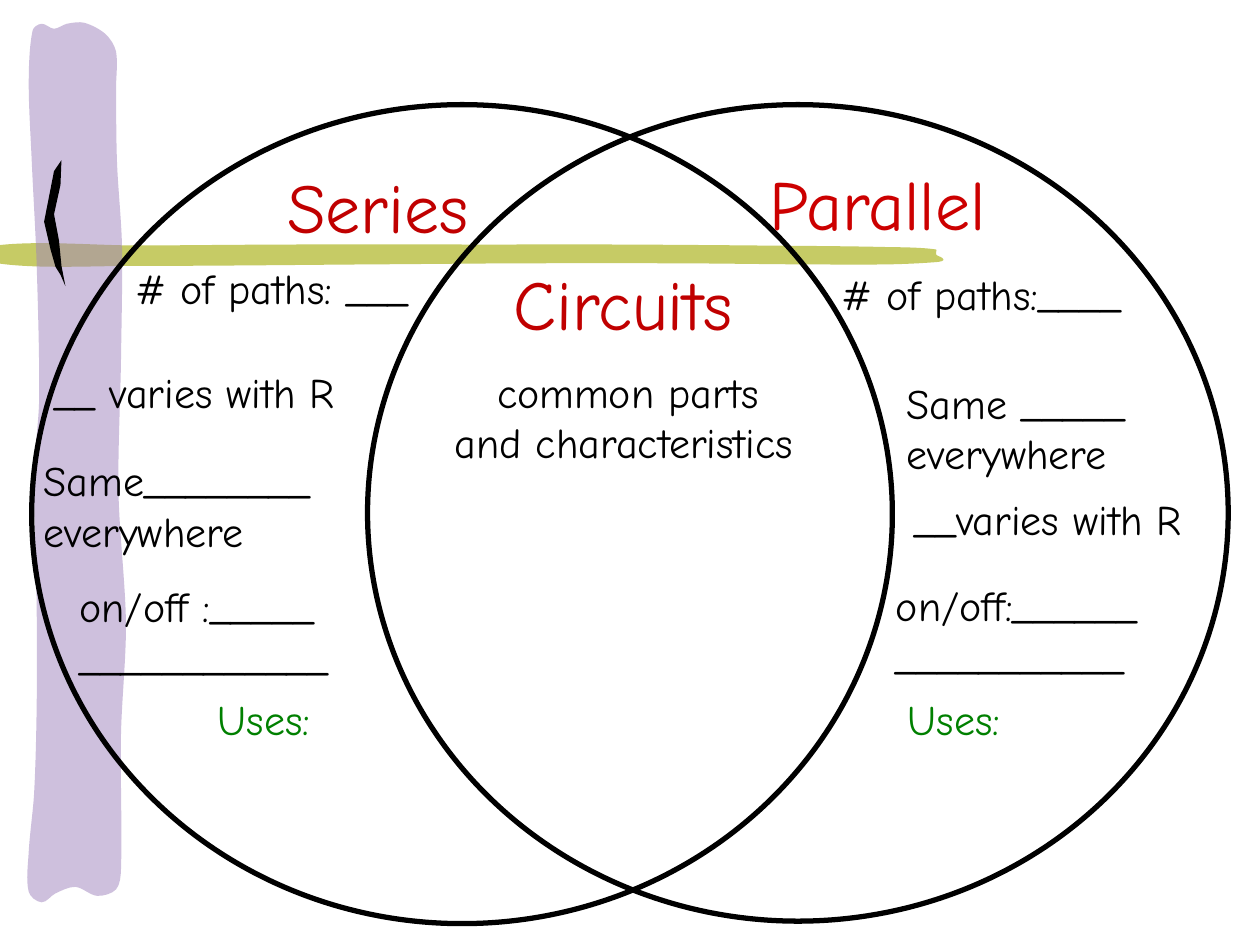
from math import dist, hypot

from lxml import etree
from pptx import Presentation
from pptx.dml.color import RGBColor
from pptx.enum.shapes import MSO_SHAPE
from pptx.enum.text import MSO_AUTO_SIZE
from pptx.oxml.ns import qn
from pptx.util import Cm, Pt

BLACK = RGBColor(0x00, 0x00, 0x00)
RED = RGBColor(0xC0, 0x00, 0x00)
BRIGHT_RED = RGBColor(0xCC, 0x00, 0x00)
GREEN = RGBColor(0x00, 0x80, 0x00)
OLIVE = RGBColor(0xC6, 0xCB, 0x65)
PURPLE = RGBColor(0x9F, 0x83, 0xBD)
FONT = "Comic Neue"

# Outlines in cm
BAND = [
    (15.27, 4.95), (17.83, 4.98), (18.87, 5.03), (18.87, 5.13), (19.02, 5.23),
    (18.92, 5.28), (17.93, 5.33), (16.13, 5.33), (13.74, 5.31), (10.52, 5.31),
    (7.57, 5.33), (2.82, 5.36), (-0.05, 5.31), (-0.08, 4.95), (2.82, 4.95),
    (5.89, 4.93), (9.93, 4.93), (12.42, 4.93),
]
BRUSH = [
    (0.74, 14.25), (0.74, 12.22), (0.69, 9.53), (0.79, 8.05), (0.74, 5.33),
    (0.64, 3.23), (0.58, 1.65), (0.66, 0.61), (0.84, 0.48), (1.09, 0.58),
    (1.35, 0.48), (1.7, 0.46), (2.13, 0.69), (2.34, 1.04), (2.34, 1.8),
    (2.36, 3.28), (2.46, 4.95), (2.44, 7.26), (2.39, 9.93), (2.54, 12.57),
    (2.44, 14.81), (2.44, 17.53), (2.34, 17.93), (1.96, 18.06), (1.52, 17.88),
    (1.12, 18.01), (0.84, 18.19), (0.58, 17.98), (0.58, 17.17), (0.69, 15.98),
]
BRACKET = [
    (1.24, 3.23), (1.22, 3.73), (1.09, 4.32), (1.19, 4.85), (1.24, 5.36), (1.32, 5.77),
    (1.22, 5.54), (1.12, 5.38), (1.02, 5.03), (0.89, 4.47), (0.99, 3.96), (1.09, 3.45),
]


def handle(before, point, after, length):
    """Control point at a distance from point, parallel to its neighbours."""
    dx, dy = after[0] - before[0], after[1] - before[1]
    k = length / hypot(dx, dy)
    return point[0] + k * dx, point[1] + k * dy


def curve_segments(sp, points):
    """Turn the straight segments of a closed freeform into Bezier curves."""
    n = len(points)
    for i, segment in enumerate(list(sp._element.iter(qn("a:lnTo")))):
        before, start, end, after = (points[(i + k) % n] for k in (-1, 0, 1, 2))
        reach = 0.3 * dist(start, end)
        curve = etree.Element(qn("a:cubicBezTo"))
        for x, y in (handle(before, start, end, reach), handle(start, end, after, -reach), end):
            pt = etree.SubElement(curve, qn("a:pt"))
            pt.set("x", str(round(x - sp.left)))
            pt.set("y", str(round(y - sp.top)))
        segment.getparent().replace(segment, curve)


prs = Presentation()
prs.slide_width, prs.slide_height = Cm(25.4), Cm(19.05)
s = prs.slides.add_slide(prs.slide_layouts[6])

# Brush strokes behind the diagram
for outline, color, alpha, curved in [
    (BAND, OLIVE, 100, True),
    (BRUSH, PURPLE, 50, True),
    (BRACKET, BLACK, 100, False),
]:
    points = [(Cm(x), Cm(y)) for x, y in outline]
    builder = s.shapes.build_freeform(*points[0])
    builder.add_line_segments(points[1:] + points[:1], close=True)
    sp = builder.convert_to_shape()
    if curved:
        curve_segments(sp, points)
    sp.shadow.inherit = False
    sp.fill.solid()
    sp.fill.fore_color.rgb = color
    sp.line.fill.background()
    if alpha < 100:
        clr = sp._element.spPr.find(qn("a:solidFill"))[0]
        etree.SubElement(clr, qn("a:alpha")).set("val", str(alpha * 1000))

# Two overlapping circles
for left, height in [(0.64, 16.51), (7.41, 16.46)]:
    sp = s.shapes.add_shape(MSO_SHAPE.OVAL, Cm(left), Cm(2.11), Cm(17.35), Cm(height))
    sp.shadow.inherit = False
    sp.fill.background()
    sp.line.color.rgb = BLACK
    sp.line.width = Pt(3)

# Labels: left, top, width, height, size, colour, first-line indent, lines
for left, top, width, height, size, color, indent, lines in [
    (5.54, 3.18, 4.85, 1.96, 40, RED, 0, ["Series"]),
    (15.27, 3.12, 5.36, 1.96, 40, BRIGHT_RED, 0, ["Parallel"]),
    (0.63, 9.04, 7.21, 2.31, 24, BLACK, 0, ["Same________", "everywhere"]),
    (8.92, 7.26, 8.23, 2.31, 24, BLACK, 0.85, ["common parts", "and characteristics"]),
    (1.35, 11.58, 6.93, 2.31, 24, BLACK, 0, ["on/off :_____", "____________"]),
    (0.84, 7.26, 6.99, 1.28, 24, BLACK, 0, ["__ varies with R"]),
    (10.11, 5.13, 5.69, 1.96, 40, RED, 0, ["Circuits"]),
    (2.49, 5.16, 6.93, 1.3, 24, BLACK, 0, ["# of paths: ___"]),
    (4.14, 13.86, 2.69, 1.3, 24, GREEN, 0, ["Uses:"]),
    (16.72, 5.28, 7.47, 1.3, 24, BLACK, 0, ["# of paths:____"]),
    (18.03, 7.48, 5.59, 2.31, 24, BLACK, 0, ["Same _____", "everywhere"]),
    (17.81, 11.56, 6.63, 2.31, 24, BLACK, 0, ["on/off:______", "___________"]),
    (18.19, 9.83, 6.99, 1.3, 24, BLACK, 0, ["__varies with R"]),
    (18.05, 13.86, 2.69, 1.3, 24, GREEN, 0, ["Uses:"]),
]:
    tf = s.shapes.add_textbox(Cm(left), Cm(top), Cm(width), Cm(height)).text_frame
    tf.word_wrap = False
    tf.auto_size = MSO_AUTO_SIZE.SHAPE_TO_FIT_TEXT
    p = tf.paragraphs[0]
    if indent:
        p._p.get_or_add_pPr().set("indent", str(Cm(indent)))
    for i, line in enumerate(lines):
        if i:
            p.add_line_break()
        r = p.add_run()
        r.text = line
        r.font.name = FONT
        r.font.size = Pt(size)
        r.font.color.rgb = color

prs.save("out.pptx")
